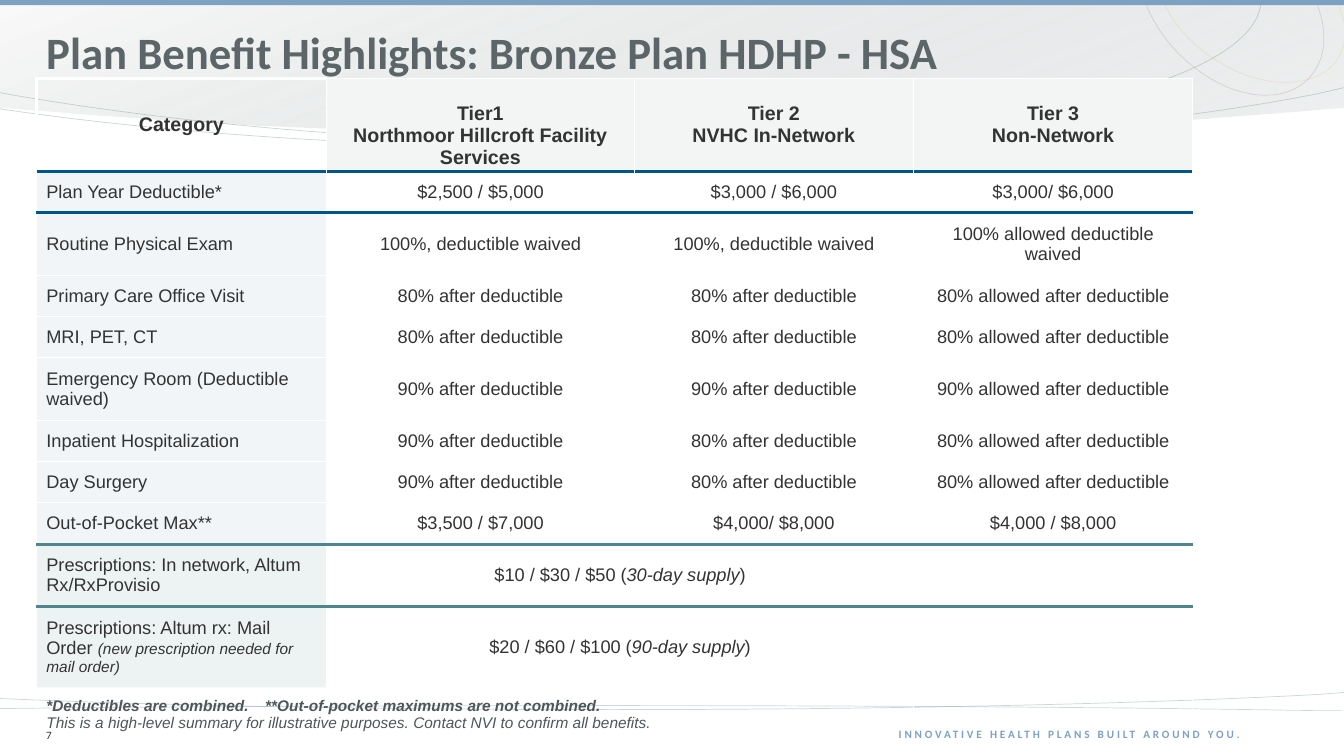
from dataclasses import dataclass, replace
from lxml.etree import SubElement
from pptx import Presentation
from pptx.dml.color import RGBColor
from pptx.enum.shapes import MSO_SHAPE
from pptx.enum.text import MSO_ANCHOR, PP_ALIGN
from pptx.oxml.ns import qn
from pptx.util import Inches, Pt


@dataclass(frozen=True)
class TextStyle:
    size: float
    color: str
    font: str = "Arial"
    bold: bool = False
    italic: bool = False


class Theme:
    white, navy, teal, blue = "FFFFFF", "005686", "4F868E", "7DA1C3"
    sage, gold, wine = "7F9C90", "D29F12", "6F263C"
    header_fill, sweep_light, sweep_dark = "F3F4F4", "F9FAF9", "C1C6C8"
    title = TextStyle(32, "5C6568", "Calibri", bold=True)
    tagline = TextStyle(8, blue, "Calibri", bold=True)
    page = TextStyle(8, "333333", "Calibri")
    header = TextStyle(14, "333333", bold=True)
    body = TextStyle(13, "333333")
    emphasis = replace(body, italic=True)
    small_italic = replace(emphasis, size=11)
    footnote = TextStyle(11, "4E5659", italic=True)
    footnote_bold = replace(footnote, bold=True)


COLUMN_WIDTHS = [2.88, 3.05, 2.77, 2.77]
ROW_HEIGHTS = [0.91, 0.41, 0.62, 0.41, 0.41, 0.62, 0.41, 0.41, 0.41, 0.62, 0.8, 0.55]
NO_RULE_BELOW = (1, 9, 10)
STRONG_RULE_BELOW = {0: (Theme.navy, 2.25), 8: (Theme.teal, 2.25)}
HEADERS = [["Category"], ["Tier1", "Northmoor Hillcroft Facility Services"],
           ["Tier 2", "NVHC In-Network"], ["Tier 3", "Non-Network"]]
AFTER_80, AFTER_90 = "80% after deductible", "90% after deductible"
ALLOWED_80, ALLOWED_90 = "80% allowed after deductible", "90% allowed after deductible"
WAIVED = "100%, deductible waived"
BENEFITS = [
    ["Plan Year Deductible*", "$2,500 / $5,000", "$3,000 / $6,000", "$3,000/ $6,000"],
    ["Routine Physical Exam", WAIVED, WAIVED, "100% allowed deductible waived"],
    ["Primary Care Office Visit", AFTER_80, AFTER_80, ALLOWED_80],
    ["MRI, PET, CT", AFTER_80, AFTER_80, ALLOWED_80],
    ["Emergency Room (Deductible waived)", AFTER_90, AFTER_90, ALLOWED_90],
    ["Inpatient Hospitalization", AFTER_90, AFTER_80, ALLOWED_80],
    ["Day Surgery", AFTER_90, AFTER_80, ALLOWED_80],
    ["Out-of-Pocket Max**", "$3,500 / $7,000", "$4,000/ $8,000", "$4,000 / $8,000"],
]
PRESCRIPTIONS = [
    ([("Prescriptions: In network, Altum Rx/RxProvisio", Theme.body)],
     "$10 / $30 / $50 (", "30-day supply"),
    ([("Prescriptions: Altum rx: Mail Order ", Theme.body),
      ("(new prescription needed for mail order)", Theme.small_italic)],
     "$20 / $60 / $100 (", "90-day supply"),
]
FOOTNOTES = [
    [("*Deductibles are combined.\t**Out-of-pocket maximums are not combined.",
      Theme.footnote_bold)],
    [("This is a high-level summary for illustrative purposes. "
      "Contact NVI to confirm all benefits.", Theme.footnote)],
]
# Each path: a start point, then two numbers for a line or six for a Bézier curve.
HEADER_SWEEP = [(0, 0), (13.33, 0), (13.33, 1.06), (13.09, 1.08),
                (11.12, 1.25, 8.94, 1.34, 6.67, 1.34),
                (4.39, 1.34, 2.22, 1.25, 0.24, 1.08), (0, 1.06), (0, 0)]
THIN_CURVES = [
    (Theme.gold, 15, (11.54, 0.01, 1.8, 0.81), [
        (13.26, 0.01), (13.36, 0.22, 13.37, 0.42, 13.27, 0.58),
        (13.07, 0.89, 12.52, 0.9, 12.05, 0.59), (11.8, 0.43, 11.62, 0.22, 11.54, 0.01)]),
    (Theme.sage, 40, (0, 0, 12.51, 1.42), [
        (12.51, 0), (12.47, 1.03, 8.6, 1.64, 3.88, 1.36),
        (2.55, 1.28, 1.29, 1.14, 0.17, 0.95), (0, 0.92)]),
    (Theme.sage, 40, (0, 0.87, 13.33, 0.6), [
        (13.33, 0.87), (13.07, 0.93), (11.41, 1.26, 8.89, 1.47, 6.08, 1.47),
        (3.74, 1.47, 1.61, 1.32, 0, 1.08)]),
    (Theme.wine, 15, (11.35, 0, 1.77, 0.94), [
        (13.05, 0.01), (13.15, 0.25, 13.16, 0.49, 13.06, 0.67),
        (12.86, 1.03, 12.33, 1.04, 11.86, 0.68), (11.62, 0.5, 11.44, 0.25, 11.35, 0)]),
    (Theme.sage, 40, (0, 6.87, 13.33, 0.17), [
        (13.33, 6.87), (13.07, 6.89), (11.41, 6.98, 8.89, 7.04, 6.08, 7.04),
        (3.74, 7.04, 1.61, 7, 0, 6.93)]),
    (Theme.blue, 40, (-0.02, 7, 13.33, 0.05), [
        (13.31, 7.05), (13.04, 7.05), (11.38, 7.02, 8.87, 7, 6.06, 7),
        (3.72, 7, 1.58, 7.01, -0.02, 7.03)]),
]


def set_alpha(element, percent):
    """Make the last colour inside element partly transparent."""
    color = element.findall(".//" + qn("a:srgbClr"))[-1]
    SubElement(color, qn("a:alpha"), val=str(percent * 1000))


def set_fill(target, color):
    target.fill.solid()
    target.fill.fore_color.rgb = RGBColor.from_string(color)


def apply_style(font, style):
    font.name, font.size = style.font, Pt(style.size)
    font.bold, font.italic = style.bold, style.italic
    font.color.rgb = RGBColor.from_string(style.color)


def write(frame, paragraphs, align=PP_ALIGN.LEFT):
    """Fill a frame; each paragraph is a list of (text, style), the first style its default."""
    for index, runs in enumerate(paragraphs):
        paragraph = frame.add_paragraph() if index else frame.paragraphs[0]
        paragraph.alignment = align
        default = runs[0][1]
        apply_style(paragraph.font, default)
        for text, style in runs:
            run = paragraph.add_run()
            run.text = text
            if style != default:
                apply_style(run.font, style)


def add_label(slide, box, text, style, align=PP_ALIGN.LEFT):
    frame = slide.shapes.add_textbox(*map(Inches, box)).text_frame
    frame.word_wrap = True
    frame.vertical_anchor = MSO_ANCHOR.MIDDLE
    write(frame, [[(text, style)]], align)
    return frame.paragraphs[0]


def add_outline(slide, box, path):
    """Build a freeform through the path's end points, then bend its curved segments."""
    start, *rest = [tuple(round(100 * value) for value in segment[-2:]) for segment in path]
    builder = slide.shapes.build_freeform(*start, scale=Inches(0.01))
    outline = builder.add_line_segments(rest, close=False).convert_to_shape()
    outline.shadow.inherit = False
    outline.left, outline.top, outline.width, outline.height = map(Inches, box)
    pen = outline.element.find(".//" + qn("a:path"))
    pen.clear()
    pen.set("w", str(outline.width))
    pen.set("h", str(outline.height))
    for index, segment in enumerate(path):
        tag = "a:cubicBezTo" if len(segment) == 6 else "a:lnTo" if index else "a:moveTo"
        step = SubElement(pen, qn(tag))
        for x, y in zip(segment[::2], segment[1::2]):
            SubElement(step, qn("a:pt"), x=str(Inches(x) - outline.left),
                       y=str(Inches(y) - outline.top))
    if path[0] == path[-1]:
        SubElement(pen, qn("a:close"))
    return outline


def add_backdrop(slide):
    sweep = add_outline(slide, (0, 0, 13.33, 1.34), HEADER_SWEEP)
    sweep.line.fill.background()
    sweep.fill.gradient()
    sweep.fill.gradient_angle = 290
    for stop, color in zip(sweep.fill.gradient_stops, (Theme.sweep_light, Theme.sweep_dark)):
        stop.color.rgb = RGBColor.from_string(color)
    set_alpha(sweep.element.spPr, 24)
    for color, opacity, box, path in THIN_CURVES:
        curve = add_outline(slide, box, path)
        curve.fill.background()
        set_fill(curve.line, color)
        curve.line.width = Pt(0.5)
        set_alpha(curve.element.spPr, opacity)
    top_band = slide.shapes.add_shape(MSO_SHAPE.RECTANGLE, 0, 0, Inches(13.33), Inches(0.05))
    top_band.shadow.inherit = False
    set_fill(top_band, Theme.blue)
    top_band.line.fill.background()


def set_borders(cell, row, column):
    thin = (Theme.white, 0.75 if row else 1)
    sides = dict.fromkeys("LRTB", thin)
    if row == column == 0:
        sides["L"] = sides["T"] = (Theme.white, 2.25)
    for side, row_above in (("T", row - 1), ("B", row)):
        sides[side] = STRONG_RULE_BELOW.get(row_above, sides[side])
        if row_above in NO_RULE_BELOW:
            del sides[side]
    properties = cell._tc.get_or_add_tcPr()
    for index, (side, (color, width)) in enumerate(sides.items()):
        border = SubElement(properties, qn("a:ln" + side), w=str(Pt(width)))
        SubElement(SubElement(border, qn("a:solidFill")), qn("a:srgbClr"), val=color)
        properties.insert(index, border)


def format_cell(cell, row, column):
    cell.vertical_anchor = MSO_ANCHOR.MIDDLE
    cell.margin_left = cell.margin_right = Inches(0.1 if row else 0)
    cell.margin_top = cell.margin_bottom = Inches(0.09 if row else 0)
    cell.fill.background()
    if row == 0 and column:
        set_fill(cell, Theme.header_fill)
    elif column == 0 and 0 < row < 11:
        set_fill(cell, Theme.blue if row < 9 else Theme.teal)
        set_alpha(cell._tc.tcPr, 10)
    set_borders(cell, row, column)


def add_benefit_table(slide):
    table = slide.shapes.add_table(
        len(ROW_HEIGHTS), len(COLUMN_WIDTHS), Inches(0.36), Inches(0.78),
        Inches(sum(COLUMN_WIDTHS)), Inches(sum(ROW_HEIGHTS))).table
    table.first_row = table.horz_banding = False
    plain_style = "{2D5ABB26-0587-4C30-8999-92F81FD0307C}"
    table._tbl.tblPr.find(qn("a:tableStyleId")).text = plain_style
    for column, width in enumerate(COLUMN_WIDTHS):
        table.columns[column].width = Inches(width)
        for row, height in enumerate(ROW_HEIGHTS):
            table.rows[row].height = Inches(height)
            format_cell(table.cell(row, column), row, column)
        write(table.cell(0, column).text_frame,
              [[(line, Theme.header)] for line in HEADERS[column]], PP_ALIGN.CENTER)
        for row, texts in enumerate(BENEFITS, start=1):
            write(table.cell(row, column).text_frame, [[(texts[column], Theme.body)]],
                  PP_ALIGN.CENTER if column else PP_ALIGN.LEFT)
    table.cell(0, 1).margin_top = Inches(0.22)
    for row, (label, price, supply) in enumerate(PRESCRIPTIONS, start=9):
        write(table.cell(row, 0).text_frame, [label])
        copay = table.cell(row, 1)
        copay.merge(table.cell(row, 2))
        write(copay.text_frame, [[(price, Theme.body), (supply, Theme.emphasis),
                                  (")", Theme.body)]], PP_ALIGN.CENTER)
    notes = table.cell(11, 0)
    notes.merge(table.cell(11, 2))
    tabs = SubElement(notes.text_frame.paragraphs[0]._p.get_or_add_pPr(), qn("a:tabLst"))
    SubElement(tabs, qn("a:tab"), pos=str(Inches(2.17)), algn="l")
    write(notes.text_frame, FOOTNOTES)


def main():
    deck = Presentation()
    deck.slide_width, deck.slide_height = Inches(13.33), Inches(7.5)
    slide = deck.slides.add_slide(deck.slide_layouts[6])
    add_backdrop(slide)
    tagline = add_label(slide, (4.32, 7.16, 8.08, 0.24),
                        "INNOVATIVE HEALTH PLANS BUILT AROUND YOU.", Theme.tagline, PP_ALIGN.RIGHT)
    tagline.runs[0].font._element.set("spc", "200")
    title = add_label(slide, (0.36, 0.23, 11.95, 0.63),
                      "Plan Benefit Highlights: Bronze Plan HDHP - HSA", Theme.title)
    title.line_spacing = 0.9
    add_label(slide, (0.36, 7.17, 0.75, 0.25), "7", Theme.page)
    add_benefit_table(slide)
    deck.save("out.pptx")


if __name__ == "__main__":
    main()
